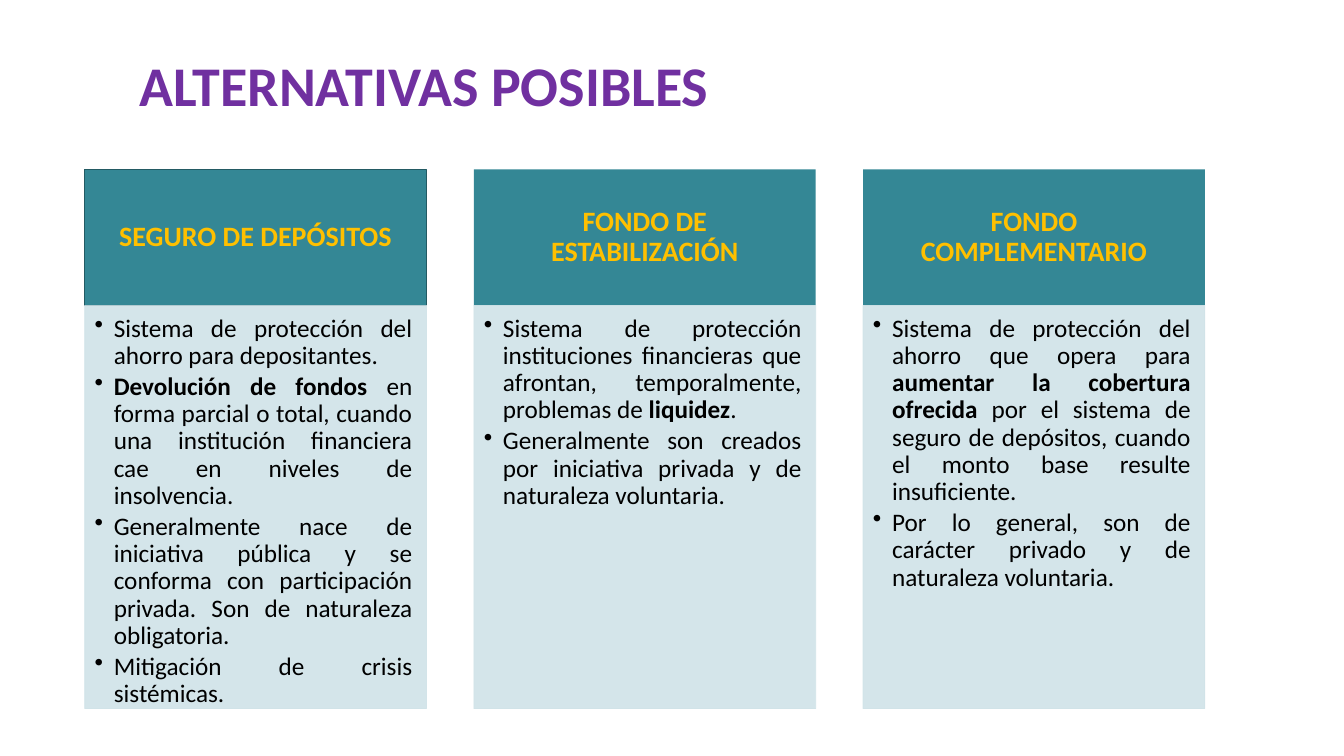
from dataclasses import dataclass

from pptx import Presentation
from pptx.dml.color import RGBColor
from pptx.enum import shapes, text
from pptx.oxml import xmlchemy
from pptx.oxml.ns import qn
from pptx.util import Inches, Pt

HEADING = "ALTERNATIVAS POSIBLES"
ALTERNATIVES = [
    ("SEGURO DE DEPÓSITOS", [
        "Sistema de protección del ahorro para depositantes.",
        "**Devolución de fondos **en forma parcial o total, cuando una institución "
        "financiera cae en niveles de insolvencia.",
        "Generalmente nace de iniciativa pública y se conforma con participación "
        "privada. Son de naturaleza obligatoria.",
        "Mitigación de crisis sistémicas.",
    ]),
    ("FONDO DE ESTABILIZACIÓN", [
        "Sistema de protección instituciones financieras que afrontan, "
        "temporalmente, problemas de **liquidez**.",
        "Generalmente son creados por iniciativa privada y de naturaleza voluntaria.",
    ]),
    ("FONDO COMPLEMENTARIO", [
        "Sistema de protección del ahorro que opera para **aumentar la cobertura "
        "ofrecida **por el sistema de seguro de depósitos, cuando el monto base "
        "resulte insuficiente.",
        "Por lo general, son de carácter privado y de naturaleza voluntaria.",
    ]),
]


@dataclass(frozen=True)
class Theme:
    font: str = "Calibri"
    heading: str = "7030A0"
    header: str = "348795"
    header_edge: str = "235A63"
    header_text: str = "FFC000"
    panel: str = "D0E3E8"
    panel_text: str = "000000"
    panel_opacity: int = 90
    heading_size: int = 40
    header_size: int = 20
    panel_size: int = 18


THEME = Theme()
LEFT, TOP = 0.84, 1.68
WIDTH, PITCH = 3.39, 3.86
HEADER_HEIGHT, PANEL_HEIGHT = 1.35, 4


def write(shape, paragraphs, *, size, color, align, bold=False, bullet=False,
          anchor=text.MSO_ANCHOR.MIDDLE, insets=(0.1, 0.05, 0.1, 0.05), after=0):
    frame = shape.text_frame
    frame.word_wrap = True
    frame.auto_size = text.MSO_AUTO_SIZE.NONE
    frame.vertical_anchor = anchor
    (frame.margin_left, frame.margin_top,
     frame.margin_right, frame.margin_bottom) = map(Inches, insets)
    for index, content in enumerate(paragraphs):
        paragraph = frame.add_paragraph() if index else frame.paragraphs[0]
        paragraph.alignment = align
        paragraph.line_spacing = 0.9
        paragraph.space_before = Pt(0)
        paragraph.space_after = Pt(after)
        if bullet:
            properties = paragraph._p.get_or_add_pPr()
            properties.set("marL", str(Inches(0.19)))
            properties.set("indent", str(Inches(-0.19)))
            mark = xmlchemy.OxmlElement("a:buChar")
            mark.set("char", "•")
            properties.append(mark)
        for part, words in enumerate(content.split("**")):
            if words:
                run = paragraph.add_run()
                run.text = words
                run.font.name = THEME.font
                run.font.size = Pt(size)
                run.font.bold = bold or part % 2 == 1
                run.font.color.rgb = RGBColor.from_string(color)


def add_block(slide, left, top, height, fill, edge=None, edge_width=0.5, opacity=100):
    block = slide.shapes.add_shape(
        shapes.MSO_SHAPE.RECTANGLE,
        Inches(left), Inches(top), Inches(WIDTH), Inches(height))
    block.shadow.inherit = False
    block.fill.solid()
    block.fill.fore_color.rgb = RGBColor.from_string(fill)
    if edge:
        block.line.color.rgb = RGBColor.from_string(edge)
        block.line.width = Pt(edge_width)
    else:
        block.line.fill.background()
    if opacity < 100:
        for color in block._element.spPr.iter(qn("a:srgbClr")):
            alpha = xmlchemy.OxmlElement("a:alpha")
            alpha.set("val", str(opacity * 1000))
            color.append(alpha)
    return block


def main():
    deck = Presentation()
    deck.slide_width, deck.slide_height = Inches(13.33), Inches(7.5)
    slide = deck.slides.add_slide(deck.slide_layouts[5])

    heading = slide.shapes.title
    heading.left, heading.top = Inches(1.28), Inches(0.48)
    heading.width, heading.height = Inches(11.12), Inches(0.79)
    write(heading, [HEADING], size=THEME.heading_size, color=THEME.heading,
          align=text.PP_ALIGN.LEFT, bold=True)

    for column, (name, points) in enumerate(ALTERNATIVES):
        left = LEFT + column * PITCH
        header = add_block(slide, left, TOP, HEADER_HEIGHT, THEME.header,
                           edge=None if column else THEME.header_edge, edge_width=0.75)
        write(header, [name], size=THEME.header_size, color=THEME.header_text,
              align=text.PP_ALIGN.CENTER, bold=True, insets=(0.16, 0.09, 0.16, 0.09))
        panel = add_block(slide, left, TOP + HEADER_HEIGHT, PANEL_HEIGHT, THEME.panel,
                          edge=THEME.panel, opacity=THEME.panel_opacity)
        write(panel, points, size=THEME.panel_size, color=THEME.panel_text,
              align=text.PP_ALIGN.JUSTIFY, bullet=True, anchor=text.MSO_ANCHOR.TOP,
              insets=(0.1, 0.1, 0.14, 0.16), after=2.7)

    deck.save("out.pptx")


if __name__ == "__main__":
    main()
